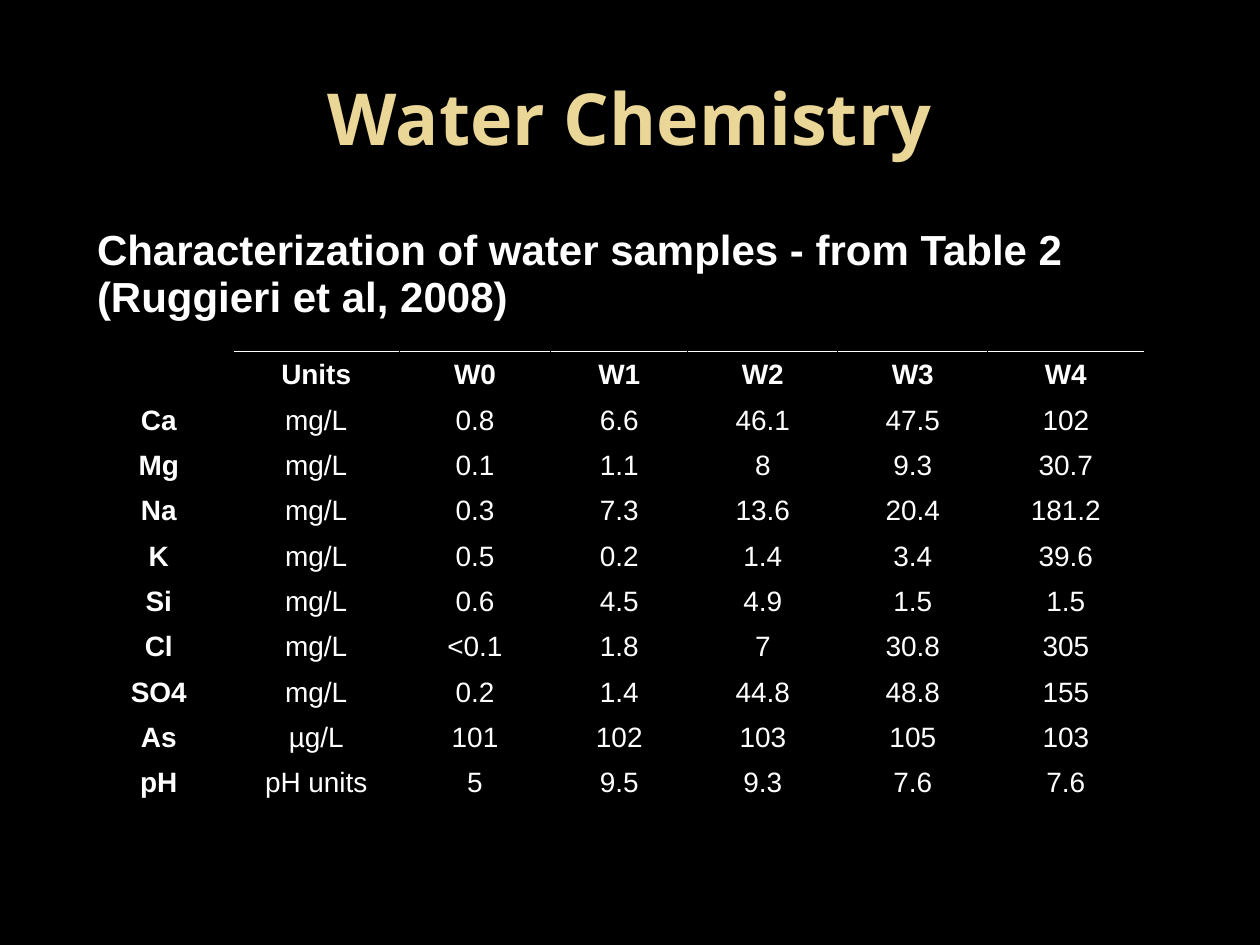
from lxml.etree import SubElement
from pptx import Presentation
from pptx.dml.color import RGBColor
from pptx.enum.text import MSO_ANCHOR as Anchor, PP_ALIGN as Align
from pptx.oxml.ns import qn
from pptx.util import Inches, Pt

BLACK, WHITE, GOLD = "000000", "FFFFFF", "EAD696"
NO_STYLE = "{2D5ABB26-0587-4C30-8999-92F81FD0307C}"
CAPTION = "Characterization of water samples - from Table 2 (Ruggieri et al, 2008)"
SAMPLES = [
    ["", "Units", "W0", "W1", "W2", "W3", "W4"],
    ["Ca", "mg/L", "0.8", "6.6", "46.1", "47.5", "102"],
    ["Mg", "mg/L", "0.1", "1.1", "8", "9.3", "30.7"],
    ["Na", "mg/L", "0.3", "7.3", "13.6", "20.4", "181.2"],
    ["K", "mg/L", "0.5", "0.2", "1.4", "3.4", "39.6"],
    ["Si", "mg/L", "0.6", "4.5", "4.9", "1.5", "1.5"],
    ["Cl", "mg/L", "<0.1", "1.8", "7", "30.8", "305"],
    ["SO4", "mg/L", "0.2", "1.4", "44.8", "48.8", "155"],
    ["As", "µg/L", "101", "102", "103", "105", "103"],
    ["pH", "pH units", "5", "9.5", "9.3", "7.6", "7.6"],
]
COLUMN_WIDTHS = [1.18, 1.32, 1.2, 1.09, 1.19, 1.19, 1.24]
CAPTION_HEIGHT, ROW_HEIGHT = 1.03, 0.36


def rgb(color):
    return RGBColor.from_string(color)


def write_text(frame, text, size, font="Arial", color=WHITE, bold=False, align=Align.CENTER):
    paragraph = frame.paragraphs[0]
    paragraph.alignment = align
    run = paragraph.add_run()
    run.text = text
    run.font.name = font
    run.font.size = Pt(size)
    run.font.bold = bold
    run.font.color.rgb = rgb(color)


def add_title(slide, text):
    box = slide.shapes.add_textbox(Inches(0.5), Inches(0.3), Inches(9), Inches(1.25))
    box.text_frame.word_wrap = True
    box.text_frame.vertical_anchor = Anchor.MIDDLE
    write_text(box.text_frame, text, 41, font="Noto Sans", color=GOLD, bold=True)


def set_borders(cell, **edge_colors):
    """Draw thin borders; edges are named L, R, T and B, in that order."""
    properties = cell._tc.get_or_add_tcPr()
    for edge, color in edge_colors.items():
        line = SubElement(properties, qn(f"a:ln{edge}"), w=str(Pt(0.5)))
        fill = SubElement(line, qn("a:solidFill"))
        SubElement(fill, qn("a:srgbClr"), val=color)


def add_sample_table(slide):
    row_heights = [CAPTION_HEIGHT] + [ROW_HEIGHT] * len(SAMPLES)
    table = slide.shapes.add_table(
        len(row_heights), len(COLUMN_WIDTHS), Inches(0.67), Inches(1.75),
        Inches(sum(COLUMN_WIDTHS)), Inches(sum(row_heights))).table
    table.first_row = table.horz_banding = False
    table._tbl.tblPr.find(qn("a:tableStyleId")).text = NO_STYLE
    for column, width in zip(table.columns, COLUMN_WIDTHS):
        column.width = Inches(width)
    for row, height in zip(table.rows, row_heights):
        row.height = Inches(height)

    caption = table.cell(0, 0)
    caption.merge(table.cell(0, len(COLUMN_WIDTHS) - 1))
    caption.vertical_anchor = Anchor.BOTTOM
    caption.margin_top, caption.margin_bottom = 0, Inches(0.24)
    write_text(caption.text_frame, CAPTION, 24, bold=True, align=Align.LEFT)
    set_borders(caption, L=BLACK, R=BLACK, T=BLACK)
    caption.fill.background()

    for row_index, values in enumerate(SAMPLES):
        for column_index, value in enumerate(values):
            cell = table.cell(row_index + 1, column_index)
            is_header = row_index == 0
            cell.vertical_anchor = Anchor.BOTTOM
            cell.margin_top = 0
            if value:
                write_text(cell.text_frame, value, 16, bold=is_header or column_index == 0)
            else:
                cell.margin_bottom = 0
            top = WHITE if is_header and column_index > 0 else BLACK
            set_borders(cell, L=BLACK, R=BLACK, T=top, B=BLACK)
            cell.fill.background()


def main():
    presentation = Presentation()
    presentation.slide_width, presentation.slide_height = Inches(10), Inches(7.5)
    slide = presentation.slides.add_slide(presentation.slide_layouts[6])
    slide.background.fill.solid()
    slide.background.fill.fore_color.rgb = rgb(BLACK)
    add_title(slide, "Water Chemistry")
    add_sample_table(slide)
    presentation.save("out.pptx")


if __name__ == "__main__":
    main()
